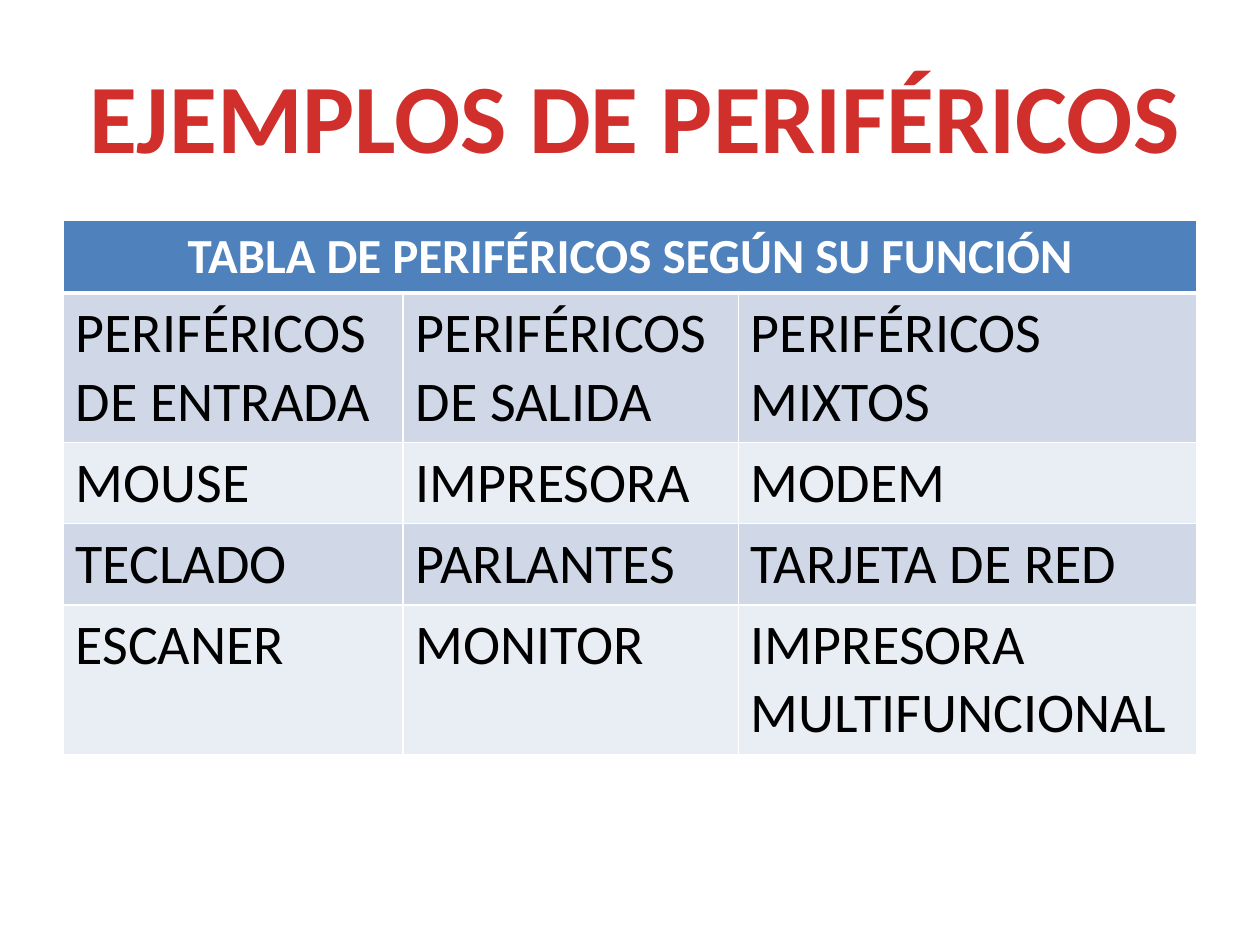
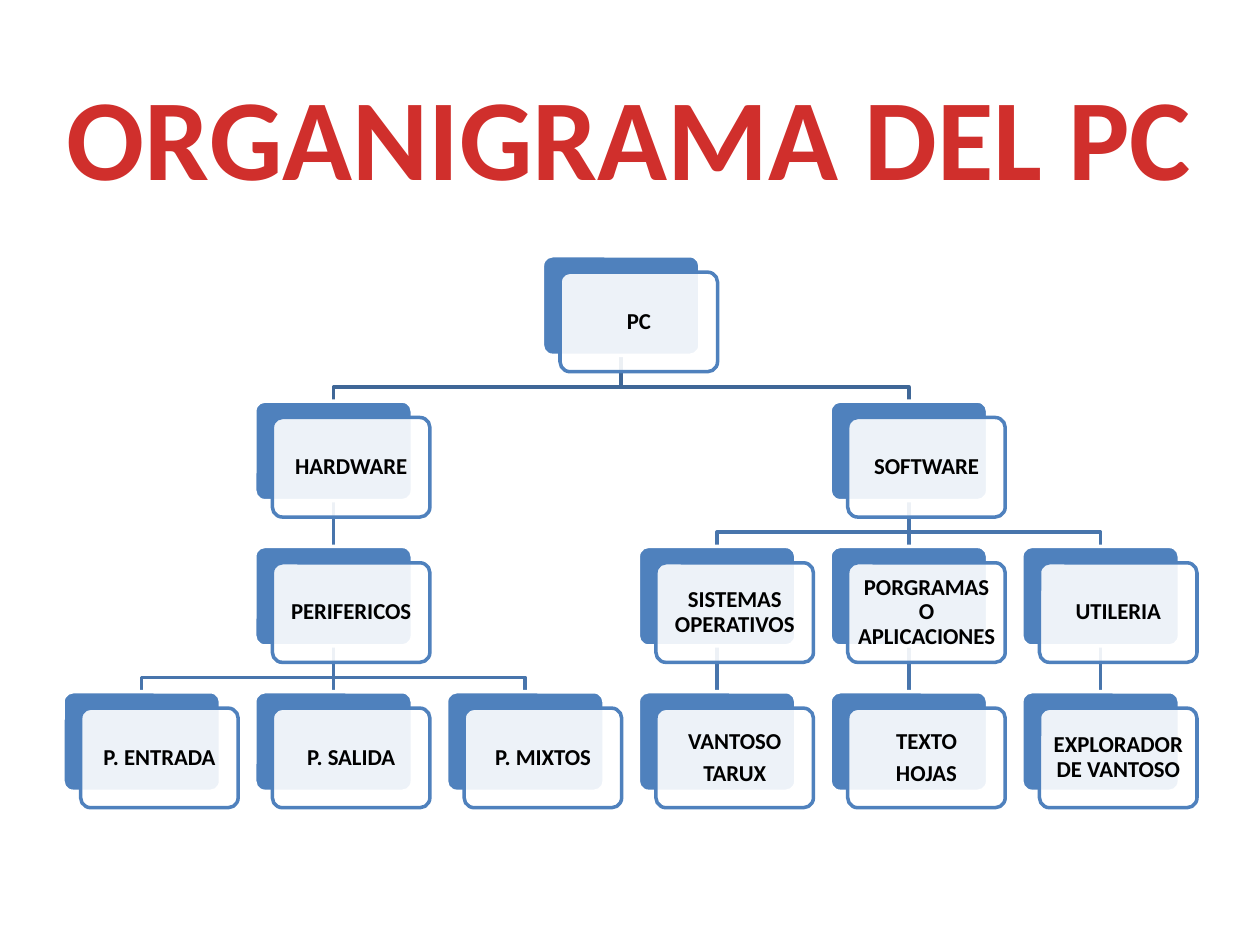
from dataclasses import dataclass

from lxml import etree
from pptx import Presentation
from pptx import util as u
from pptx.dml.color import RGBColor
from pptx.enum import shapes, text
from pptx.oxml import ns


@dataclass(frozen=True)
class Theme:
    font: str = "Calibri"
    blue: str = "4F81BD"
    band_dark: str = "D0D8E8"
    band_light: str = "E9EDF4"
    white: str = "FFFFFF"
    black: str = "000000"
    root_line: str = "3F6797"
    branch_line: str = "4875AC"
    title_stops: tuple = ((0, "FC7C7A"), (75, "D02F2C"), (100, "C70500"))
    header_size: int = 28
    cell_size: int = 32
    node_size: int = 13
    line_width: int = 2


THEME = Theme()

TABLE_HEADER = "TABLA DE PERIFÉRICOS SEGÚN SU FUNCIÓN"
TABLE_ROWS = [
    ["PERIFÉRICOS DE ENTRADA", "PERIFÉRICOS DE SALIDA", "PERIFÉRICOS MIXTOS"],
    ["MOUSE", "IMPRESORA", "MODEM"],
    ["TECLADO", "PARLANTES", "TARJETA DE RED"],
    ["ESCANER", "MONITOR", "IMPRESORA MULTIFUNCIONAL"],
]
COLUMN_WIDTHS = [2.7, 2.66, 3.64]
ROW_HEIGHTS = [0.56, 1.18, 0.64, 0.64, 1.18]

# Each node is (lines of text, children)
PC_TREE = (["PC"], [
    (["HARDWARE"], [
        (["PERIFERICOS"], [
            (["P. ENTRADA"], []), (["P. SALIDA"], []), (["P. MIXTOS"], [])])]),
    (["SOFTWARE"], [
        (["SISTEMAS OPERATIVOS"], [(["VANTOSO", "TARUX"], [])]),
        (["PORGRAMAS O APLICACIONES"], [(["TEXTO", "HOJAS"], [])]),
        (["UTILERIA"], [(["EXPLORADOR DE VANTOSO"], [])])]),
])


# Shared helpers
def color(value):
    return RGBColor.from_string(value)


def add_run(paragraph, words, size, bold=True, ink=None):
    run = paragraph.add_run()
    run.text = words
    run.font.name = THEME.font
    run.font.size = u.Pt(size)
    run.font.bold = bold
    if ink:
        run.font.color.rgb = color(ink)
    return run


def set_line(shape, ink):
    shape.line.color.rgb = color(ink)
    shape.line.width = u.Pt(THEME.line_width)


def add_title(slide, box, words, size):
    left, top, width, height = map(u.Inches, box)
    frame = slide.shapes.add_textbox(left, top, width, height).text_frame
    frame.word_wrap = False
    paragraph = frame.paragraphs[0]
    paragraph.alignment = text.PP_ALIGN.CENTER
    run = add_run(paragraph, words, size)
    # Vertical red gradient in the letters
    gradient = etree.Element(ns.qn("a:gradFill"))
    stops = etree.SubElement(gradient, ns.qn("a:gsLst"))
    for position, ink in THEME.title_stops:
        stop = etree.SubElement(stops, ns.qn("a:gs"), pos=str(position * 1000))
        etree.SubElement(stop, ns.qn("a:srgbClr"), val=ink)
    etree.SubElement(gradient, ns.qn("a:lin"), ang="5400000")
    run.font._element.insert(0, gradient)


# Table of peripherals
def set_borders(cell, top, bottom):
    properties = cell._tc.get_or_add_tcPr()
    sides = {"L": 1, "R": 1, "T": top, "B": bottom}
    for index, (side, width) in enumerate(sides.items()):
        line = etree.Element(ns.qn(f"a:ln{side}"), w=str(u.Pt(width)))
        fill = etree.SubElement(line, ns.qn("a:solidFill"))
        etree.SubElement(fill, ns.qn("a:srgbClr"), val=THEME.white)
        properties.insert(index, line)


def add_peripherals_table(slide, box):
    left, top, width, height = map(u.Inches, box)
    table = slide.shapes.add_table(len(ROW_HEIGHTS), len(COLUMN_WIDTHS),
                                   left, top, width, height).table
    table.horz_banding = False
    for column, size in zip(table.columns, COLUMN_WIDTHS):
        column.width = u.Inches(size)
    for row, size in zip(table.rows, ROW_HEIGHTS):
        row.height = u.Inches(size)

    for number, row in enumerate(table.rows):
        band = THEME.band_dark if number % 2 else THEME.band_light
        for cell in row.cells:
            cell.fill.solid()
            cell.fill.fore_color.rgb = color(band if number else THEME.blue)
            set_borders(cell, 3 if number == 1 else 1, 1 if number else 3)

    header = table.cell(0, 0)
    header.merge(table.cell(0, len(COLUMN_WIDTHS) - 1))
    paragraph = header.text_frame.paragraphs[0]
    paragraph.alignment = text.PP_ALIGN.CENTER
    add_run(paragraph, TABLE_HEADER, THEME.header_size, ink=THEME.white)
    for number, row in enumerate(TABLE_ROWS, start=1):
        for column, words in enumerate(row):
            paragraph = table.cell(number, column).text_frame.paragraphs[0]
            add_run(paragraph, words, THEME.cell_size, False, THEME.black)


# Organisation chart
CARD_WIDTH, CARD_HEIGHT = 1.25, 0.79
SHIFT_X, SHIFT_Y = 0.14, 0.13
BEND_DROP = 0.25
COLUMNS, LEVELS = 6, 4


def add_card(slide, left, top, fill, line):
    card = slide.shapes.add_shape(
        shapes.MSO_SHAPE.ROUNDED_RECTANGLE, u.Inches(left), u.Inches(top),
        u.Inches(CARD_WIDTH), u.Inches(CARD_HEIGHT))
    card.adjustments[0] = 0.1
    card.shadow.inherit = False
    card.fill.solid()
    card.fill.fore_color.rgb = color(fill)
    set_line(card, line)
    return card


def add_node(slide, left, top, lines):
    """Draw a blue card under a translucent labelled one; return the blue card."""
    back = add_card(slide, left, top, THEME.blue, THEME.white)
    front = add_card(slide, left + SHIFT_X, top + SHIFT_Y, THEME.white, THEME.blue)
    ink = front.element.spPr.find(ns.qn("a:solidFill"))[0]
    etree.SubElement(ink, ns.qn("a:alpha"), val="90000")

    frame = front.text_frame
    frame.word_wrap = True
    frame.vertical_anchor = text.MSO_ANCHOR.MIDDLE
    frame.margin_left = frame.margin_right = u.Inches(0.05)
    frame.margin_top = frame.margin_bottom = u.Inches(0.05)
    for number, words in enumerate(lines):
        paragraph = frame.add_paragraph() if number else frame.paragraphs[0]
        paragraph.alignment = text.PP_ALIGN.CENTER
        paragraph.line_spacing = 0.9
        paragraph.space_after = u.Pt(4.5)
        add_run(paragraph, words, THEME.node_size, ink=THEME.black)
    return back


def add_branch(slide, parent, child, ink):
    start_x = parent.left + parent.width // 2
    start_y = parent.top + parent.height
    end_x = child.left + child.width // 2
    if abs(start_x - end_x) < u.Inches(0.01):
        branch = slide.shapes.add_connector(
            shapes.MSO_CONNECTOR.STRAIGHT, start_x, start_y, end_x, child.top)
        branch.begin_connect(parent, 2)
        branch.end_connect(child, 0)
        etree.SubElement(branch.element.spPr, ns.qn("a:effectLst"))
        set_line(branch, ink)
    else:
        bend_y = start_y + u.Inches(BEND_DROP)
        builder = slide.shapes.build_freeform(start_x, start_y)
        builder.add_line_segments(
            [(start_x, bend_y), (end_x, bend_y), (end_x, child.top)], close=False)
        branch = builder.convert_to_shape()
        branch.shadow.inherit = False
        branch.fill.background()
        set_line(branch, ink)
    # Branches lie behind all cards
    slide.shapes._spTree.insert(2, branch.element)


def add_org_chart(slide, box, tree):
    left, top, width, height = box
    column_step = (width - CARD_WIDTH - SHIFT_X) / (COLUMNS - 1)
    level_step = (height - CARD_HEIGHT - SHIFT_Y) / (LEVELS - 1)
    leaf_columns = iter(range(COLUMNS))

    def place(node, level):
        lines, children = node
        placed = [place(child, level + 1) for child in children]
        # A parent stands midway between its first and last child
        column = ((placed[0][1] + placed[-1][1]) / 2 if placed
                  else next(leaf_columns))
        card = add_node(slide, left + column * column_step,
                        top + level * level_step, lines)
        ink = THEME.branch_line if level else THEME.root_line
        for child, _ in placed:
            add_branch(slide, card, child, ink)
        return card, column

    place(tree, 0)


def main():
    presentation = Presentation()
    presentation.slide_width = u.Inches(10)
    presentation.slide_height = u.Inches(7.5)
    blank = presentation.slide_layouts[6]

    slide = presentation.slides.add_slide(blank)
    add_peripherals_table(slide, (0.5, 1.75, 9, 4.2))
    add_title(slide, (0.55, 0.39, 8.98, 1.04), "EJEMPLOS DE PERIFÉRICOS", 56)

    slide = presentation.slides.add_slide(blank)
    add_org_chart(slide, (0.5, 2.03, 9, 4.38), PC_TREE)
    add_title(slide, (0.39, 0.47, 9.21, 1.21), "ORGANIGRAMA DEL PC", 66)

    presentation.save("out.pptx")


if __name__ == "__main__":
    main()
